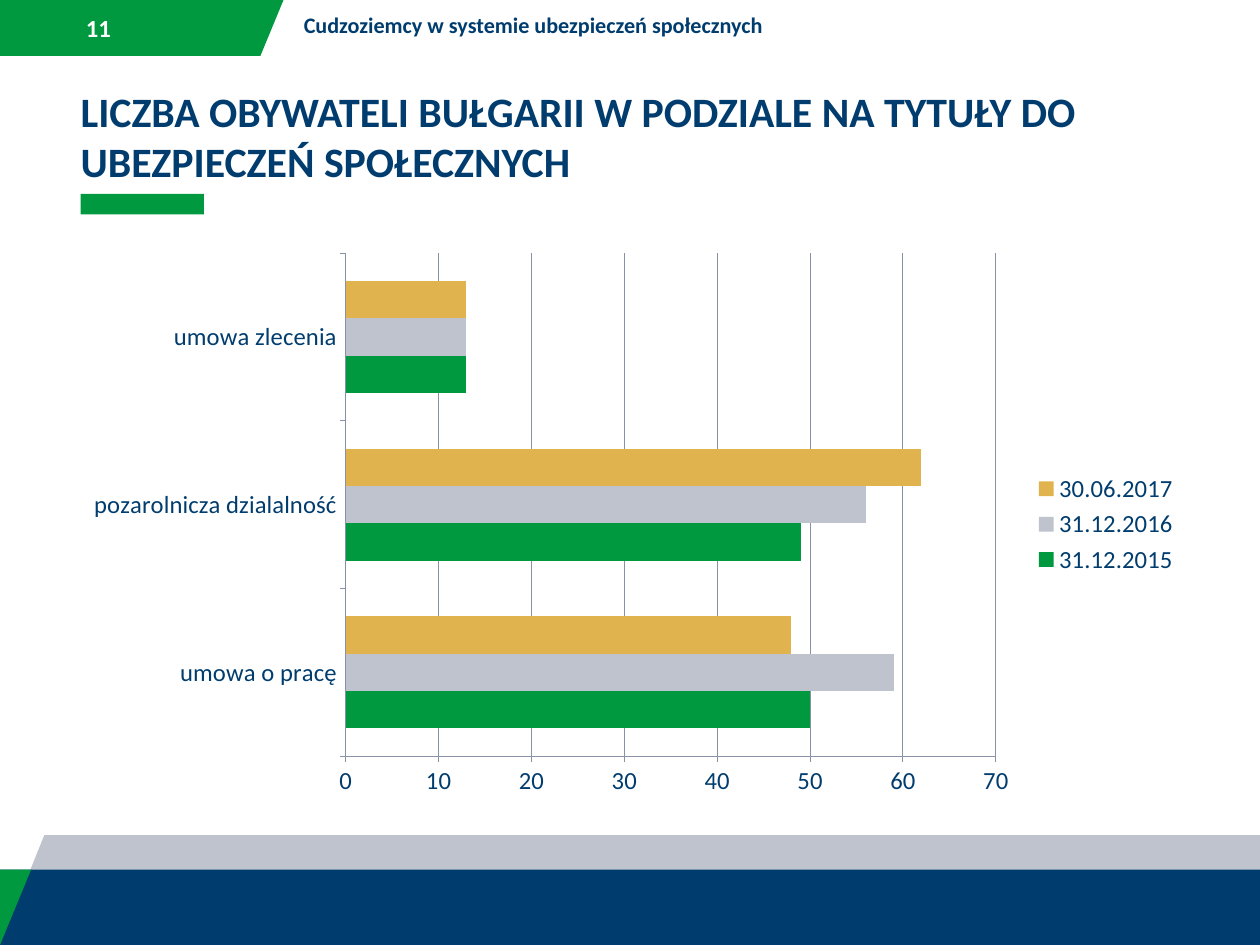
from pptx import Presentation
from pptx.chart.data import CategoryChartData as Data
from pptx.dml.color import RGBColor as RGB
from pptx.enum.chart import XL_CHART_TYPE as Kind, XL_LEGEND_POSITION as Side, XL_TICK_MARK as Tick
from pptx.enum.shapes import MSO_SHAPE as Form
from pptx.enum.text import MSO_ANCHOR as Anchor, MSO_AUTO_SIZE as Fit, PP_ALIGN as Align
from pptx.util import Inches, Pt

WIDE, HIGH = 14.22, 10.67
FONT = "Calibri"
HUE = {"green": "00993F", "grey": "BEC3CE", "navy": "003D6E",
       "gold": "E1B34F", "white": "FFFFFF", "line": "8792A6"}

TITLE = "LICZBA OBYWATELI BUŁGARII W PODZIALE NA TYTUŁY DO UBEZPIECZEŃ SPOŁECZNYCH"
HEAD = "Cudzoziemcy w systemie ubezpieczeń społecznych"
PAGE = "11"
CATS = ["umowa o pracę", "pozarolnicza dzialalność", "umowa zlecenia"]
ROWS = [("31.12.2015", (50, 49, 13), "green"),
        ("31.12.2016", (59, 56, 13), "grey"),
        ("30.06.2017", (48, 62, 13), "gold")]

BAND, BASE = 9.43, 9.82
TAB = [(0, 0), (3.2, 0), (2.94, 0.63), (0, 0.63)]
STRIP = [(0, HIGH), (0.5, BAND), (WIDE, BAND), (WIDE, HIGH)]
WEDGE = [(0, BASE), (0.35, BASE), (0, HIGH)]
FLOOR = (0, BASE, WIDE, HIGH - BASE)
MARK = (0.91, 2.19, 1.39, 0.23)

deck = Presentation()
deck.slide_width, deck.slide_height = Inches(WIDE), Inches(HIGH)
slide = deck.slides.add_slide(deck.slide_layouts[5])
shapes = slide.shapes


def color(hue):
    return RGB.from_string(HUE[hue])


def paint(shape, hue):
    shape.fill.solid()
    shape.fill.fore_color.rgb = color(hue)
    shape.line.fill.background()
    shape.shadow.inherit = False


def poly(dots, hue):
    dots = [(Inches(x), Inches(y)) for x, y in dots]
    pen = shapes.build_freeform(*dots[0])
    pen.add_line_segments(dots[1:], close=True)
    paint(pen.convert_to_shape(), hue)


def block(area, hue):
    paint(shapes.add_shape(Form.RECTANGLE, *map(Inches, area)), hue)


def write(text, area, size, hue="navy", anchor=Anchor.TOP, pad=(0.1, 0.05), after=0, box=None):
    box = box or shapes.add_textbox(0, 0, 0, 0)
    box.left, box.top, box.width, box.height = map(Inches, area)
    frame = box.text_frame
    frame.text = text
    frame.word_wrap = True
    frame.auto_size = Fit.NONE
    frame.vertical_anchor = anchor
    frame.margin_left = frame.margin_right = Inches(pad[0])
    frame.margin_top = frame.margin_bottom = Inches(pad[1])
    para = frame.paragraphs[0]
    para.alignment = Align.LEFT
    para.space_after = Pt(after)
    font = para.runs[0].font
    font.name, font.size, font.bold = FONT, Pt(size), True
    font.color.rgb = color(hue)


def plot(area):
    data = CategoryChartData()
    data.categories = CATS
    for name, vals, hue in ROWS:
        data.add_series(name, vals)
    chart = shapes.add_chart(Kind.BAR_CLUSTERED, *map(Inches, area), data).chart
    chart.has_title = False
    chart.font.name, chart.font.size = FONT, Pt(20)
    chart.font.color.rgb = color("navy")
    chart.has_legend = True
    chart.legend.position = Side.RIGHT
    chart.legend.include_in_layout = False
    bars = chart.plots[0]
    bars.gap_width = 150
    bars.vary_by_categories = False
    for bar, (name, vals, hue) in zip(bars.series, ROWS):
        bar.format.fill.solid()
        bar.format.fill.fore_color.rgb = color(hue)
    cat, val = chart.category_axis, chart.value_axis
    cat.has_major_gridlines, val.has_major_gridlines = False, True
    val.minimum_scale, val.maximum_scale, val.major_unit = 0, 70, 10
    for axis in (cat, val):
        axis.major_tick_mark, axis.minor_tick_mark = Tick.OUTSIDE, Tick.NONE
    for rule in (cat, val, val.major_gridlines):
        rule.format.line.color.rgb = color("line")
        rule.format.line.width = Pt(0.75)


CategoryChartData = Data
poly(TAB, "green")
poly(STRIP, "grey")
block(FLOOR, "navy")
poly(WEDGE, "green")
block(MARK, "green")
write(PAGE, (0.91, 0.09, 0.85, 0.45), 20, "white", Anchor.MIDDLE, (0.06, 0.06))
write(HEAD, (3.33, 0.08, 10.08, 0.42), 18, after=6)
write(TITLE, (0.81, 0.92, 12.6, 1.18), 34, box=shapes.title)
plot((0.81, 2.73, 12.6, 6.38))
deck.save("out.pptx")
